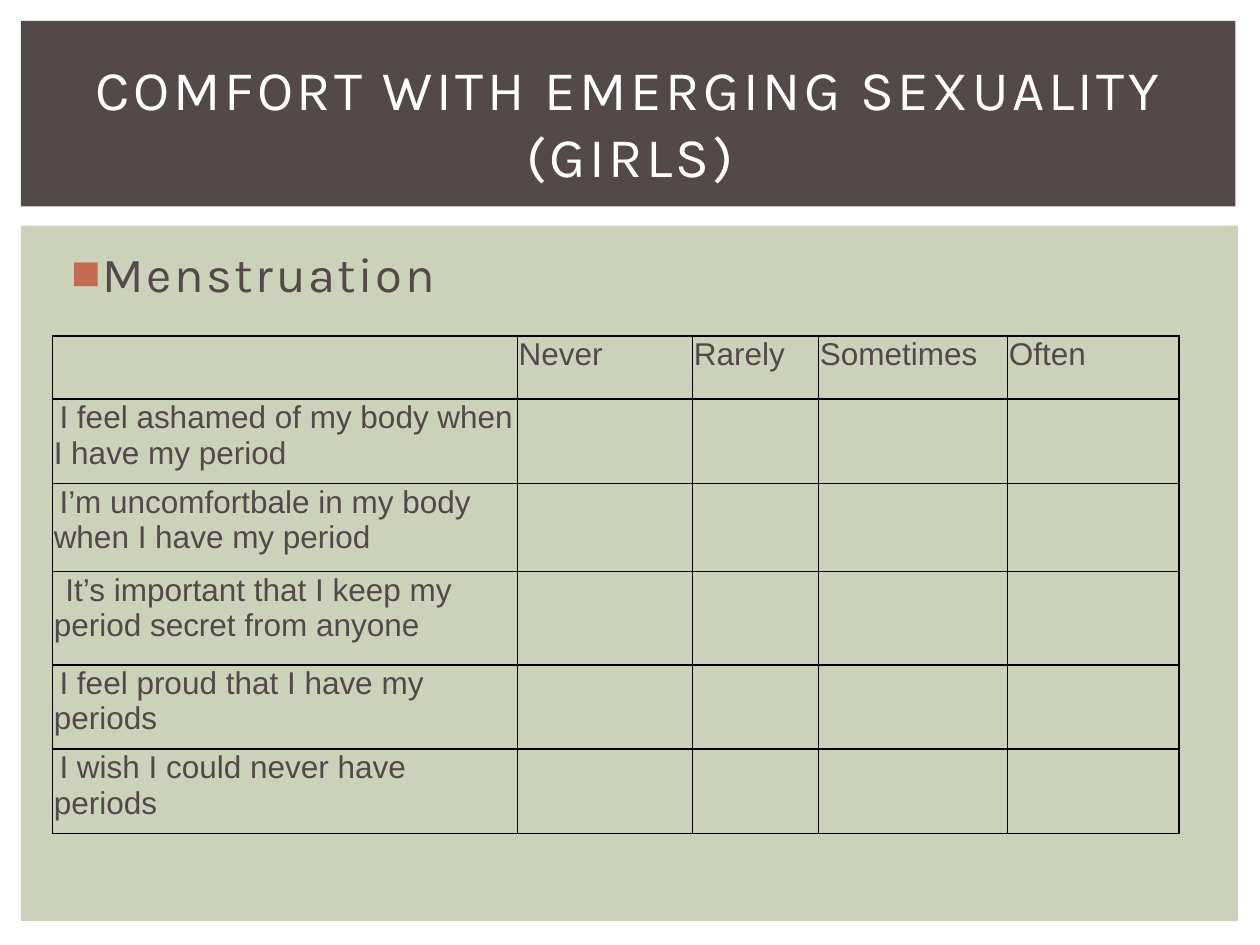
from lxml import etree
from pptx import Presentation
from pptx.dml.color import RGBColor
from pptx.enum.shapes import MSO_SHAPE
from pptx.enum.text import MSO_ANCHOR, MSO_AUTO_SIZE, PP_ALIGN
from pptx.oxml.ns import qn
from pptx.util import Pt

RECT = MSO_SHAPE.RECTANGLE
MIDDLE = MSO_ANCHOR.MIDDLE
CENTER = PP_ALIGN.CENTER
FIXED = MSO_AUTO_SIZE.NONE

DARK = "534949"
SAGE = "CCD1B9"
RUST = "C66951"
WHITE = "FFFFFF"
BLACK = "000000"

HEADS = ["Never", "Rarely", "Sometimes", "Often"]
ITEMS = [
    ("I feel ashamed of my body when I have my period", 3.3),
    ("I’m uncomfortbale in my body when I have my period", 3.3),
    ("It’s important that I keep my period secret from anyone", 6.7),
    ("I feel proud that I have my periods", 3.3),
    ("I wish I could never have periods", 3.3),
]
WIDTHS = [265.7, 100.1, 72, 108, 97.9]
HEIGHTS = [36, 48.2, 50.4, 53.3, 48.2, 48.2]


def tint(text):
    return RGBColor.from_string(text)


def style(par, size, face, color, gap=0):
    for run in par.runs:
        run.font.size = Pt(size)
        run.font.name = face
        run.font.color.rgb = tint(color)
        if gap:
            run.font._element.set("spc", str(int(gap * 100)))


def indent(par, left, first):
    props = par._p.get_or_add_pPr()
    props.set("marL", str(Pt(left)))
    props.set("indent", str(Pt(first)))
    return props


def panel(slide, box, color):
    shape = slide.shapes.add_shape(RECT, *map(Pt, box))
    shape.shadow.inherit = False
    shape.fill.solid()
    shape.fill.fore_color.rgb = tint(color)
    shape.line.fill.background()


def title(slide, text, box):
    shape = slide.shapes.title
    shape.left, shape.top, shape.width, shape.height = map(Pt, box)
    slide.shapes._spTree.append(shape._element)
    frame = shape.text_frame
    frame.text = text
    frame.word_wrap = True
    frame.auto_size = FIXED
    frame.vertical_anchor = MIDDLE
    par = frame.paragraphs[0]
    par.alignment = CENTER
    style(par, 32, "Karla", WHITE, 2)


def bullet(slide, text, box):
    frame = slide.shapes.add_textbox(*map(Pt, box)).text_frame
    frame.word_wrap = True
    frame.text = text
    par = frame.paragraphs[0]
    par.space_before = Pt(5.6)
    style(par, 28, "Karla", DARK, 1.5)
    props = indent(par, 21.6, -18)
    color = etree.SubElement(props, qn("a:buClr"))
    etree.SubElement(color, qn("a:srgbClr")).set("val", RUST)
    etree.SubElement(props, qn("a:buFont")).set("typeface", "Arial")
    etree.SubElement(props, qn("a:buChar")).set("char", "■")


def border(cell):
    props = cell._tc.get_or_add_tcPr()
    for spot, side in enumerate(("lnL", "lnR", "lnT", "lnB")):
        line = etree.Element(qn("a:" + side), w=str(Pt(1)))
        fill = etree.SubElement(line, qn("a:solidFill"))
        etree.SubElement(fill, qn("a:srgbClr")).set("val", BLACK)
        props.insert(spot, line)


def write(cell, text, first=0):
    cell.text = text
    cell.margin_left = cell.margin_right = cell.margin_top = Pt(0.75)
    cell.margin_bottom = Pt(0)
    par = cell.text_frame.paragraphs[0]
    style(par, 18, "Arial", DARK)
    indent(par, 0, first)


def grid(slide, left, top):
    box = (left, top, sum(WIDTHS), sum(HEIGHTS))
    frame = slide.shapes.add_table(len(HEIGHTS), len(WIDTHS), *map(Pt, box))
    table = frame.table
    table.first_row = table.horz_banding = False
    for col, width in zip(table.columns, WIDTHS):
        col.width = Pt(width)
    for row, height in zip(table.rows, HEIGHTS):
        row.height = Pt(height)
    for cell in table.iter_cells():
        cell.fill.background()
        border(cell)
    for col, text in enumerate(HEADS, 1):
        write(table.cell(0, col), text)
    for row, (text, first) in enumerate(ITEMS, 1):
        write(table.cell(row, 0), text, first)


def main():
    deck = Presentation()
    deck.slide_width, deck.slide_height = Pt(720), Pt(540)
    slide = deck.slides.add_slide(deck.slide_layouts[5])
    panel(slide, (12, 128.9, 695.5, 397.4), SAGE)
    panel(slide, (12, 12, 694, 106), DARK)
    title(slide, "COMFORT WITH EMERGING SEXUALITY (GIRLS)", (30, 28, 660, 83))
    bullet(slide, "Menstruation", (30, 135.4, 661.5, 347))
    grid(slide, 30, 192)
    deck.save("out.pptx")


if __name__ == "__main__":
    main()
